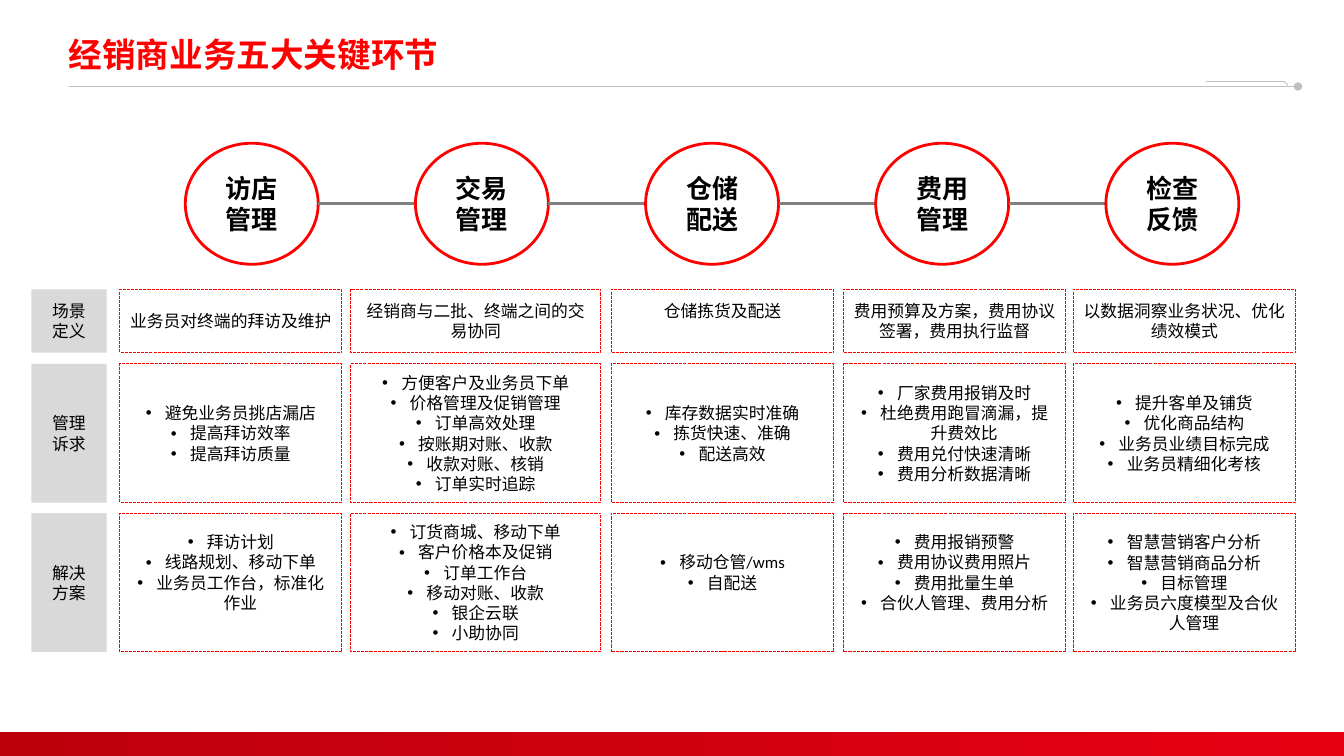
import lxml.etree
import pptx
import pptx.util
import pptx.dml.color
import pptx.enum.dml
import pptx.enum.shapes
import pptx.enum.text
import pptx.oxml.ns

Cm = pptx.util.Cm
Pt = pptx.util.Pt
Kind = pptx.enum.shapes.MSO_SHAPE
Align = pptx.enum.text.PP_ALIGN

COLORS = {
    "red": "FF0000", "text": "000000", "label": "D9D9D9", "link": "808080",
    "rule": "BFBFBF", "dark": "BC000B", "bright": "E60012",
}
CJK = "Noto Sans CJK SC"
LINE = 0.51
STEPS = ["访店管理", "交易管理", "仓储配送", "费用管理", "检查反馈"]
COLS = [(3.02, 5.6), (8.84, 6.3), (15.41, 5.6), (21.26, 5.6), (27.05, 5.6)]
ROWS = [
    (7.29, 1.6, ["场景", "定义"], False, [
        ["业务员对终端的拜访及维护"],
        ["经销商与二批、终端之间的交易协同"],
        ["仓储拣货及配送"],
        ["费用预算及方案，费用协议签署，费用执行监督"],
        ["以数据洞察业务状况、优化绩效模式"],
    ], [2]),
    (9.17, 3.5, ["管理", "诉求"], True, [
        ["避免业务员挑店漏店", "提高拜访效率", "提高拜访质量"],
        ["方便客户及业务员下单", "价格管理及促销管理", "订单高效处理",
         "按账期对账、收款", "收款对账、核销", "订单实时追踪"],
        ["库存数据实时准确", "拣货快速、准确", "配送高效"],
        ["厂家费用报销及时", "杜绝费用跑冒滴漏，提升费效比",
         "费用兑付快速清晰", "费用分析数据清晰"],
        ["提升客单及铺货", "优化商品结构", "业务员业绩目标完成", "业务员精细化考核"],
    ], []),
    (12.93, 3.5, ["解决", "方案"], True, [
        ["拜访计划", "线路规划、移动下单", "业务员工作台，标准化作业"],
        ["订货商城、移动下单", "客户价格本及促销", "订单工作台",
         "移动对账、收款", "银企云联", "小助协同"],
        ["移动仓管/wms", "自配送"],
        ["费用报销预警", "费用协议费用照片", "费用批量生单", "合伙人管理、费用分析"],
        ["智慧营销客户分析", "智慧营销商品分析", "目标管理", "业务员六度模型及合伙人管理"],
    ], [0, 2, 3]),
]


def color(name):
    return pptx.dml.color.RGBColor.from_string(COLORS[name])


def add_tag(parent, tag, **attrs):
    return lxml.etree.SubElement(parent, pptx.oxml.ns.qn(tag), attrs)


def write(shape, lines, size=12, bold=False, tint="text", font="Calibri",
          align=Align.CENTER, bullet=False, space=None, lift=0):
    frame = shape.text_frame
    frame.word_wrap = True
    frame.vertical_anchor = pptx.enum.text.MSO_ANCHOR.MIDDLE
    frame.margin_bottom = Cm(0.13 + lift)
    for index, line in enumerate(lines):
        para = frame.add_paragraph() if index else frame.paragraphs[0]
        if bullet:
            props = para._p.get_or_add_pPr()
            props.set("marL", str(Cm(0.48)))
            props.set("indent", str(Cm(-0.48)))
            add_tag(props, "a:buFont", typeface="Arial")
            add_tag(props, "a:buChar", char="•")
        para.alignment = align
        if space:
            para.line_spacing = space
        run = para.add_run()
        run.text = line
        run.font.size = Pt(size)
        run.font.bold = bold
        run.font.color.rgb = color(tint)
        run.font.name = font
        add_tag(run._r.get_or_add_rPr(), "a:ea", typeface=CJK)


def add_box(slide, box, kind=Kind.RECTANGLE, fill=None, line=None, width=0.75, dash=False):
    shape = slide.shapes.add_shape(kind, *map(Cm, box))
    shape.shadow.inherit = False
    if fill:
        shape.fill.solid()
        shape.fill.fore_color.rgb = color(fill)
    else:
        shape.fill.background()
    if line:
        shape.line.color.rgb = color(line)
        shape.line.width = Pt(width)
    else:
        shape.line.fill.background()
    if dash:
        shape.line.dash_style = pptx.enum.dml.MSO_LINE.SQUARE_DOT
    return shape


def add_line(slide, ends, tint, width, dot=False):
    line = slide.shapes.add_connector(pptx.enum.shapes.MSO_CONNECTOR.STRAIGHT, *map(Cm, ends))
    line.line.color.rgb = color(tint)
    line.line.width = Pt(width)
    if dot:
        add_tag(line.line._get_or_add_ln(), "a:tailEnd", type="oval")
    add_tag(line._element.spPr, "a:effectLst")


def add_head(slide, left, top, width, height):
    right, base = left + width, top + height
    add_line(slide, (left, base, right, base), "rule", 0.75, dot=True)
    add_line(slide, (right - 2.33, base - 0.13, right - 0.35, base - 0.13), "rule", 0.75)
    add_line(slide, (right - 0.35, base - 0.13, right - 0.25, base - 0.03), "rule", 0.75)
    title = slide.shapes.title
    title.left, title.top = Cm(left), Cm(top)
    title.width, title.height = Cm(25.6), Cm(1.27)
    title.text_frame.margin_left = 0
    write(title, ["经销商业务五大关键环节"], size=24, bold=True, tint="red",
          font=CJK, align=Align.LEFT, space=0.9)


def add_foot(slide, left, top, width, height):
    bar = add_box(slide, (left, top, width, height), fill="dark")
    bar.fill.gradient()
    bar.fill.gradient_angle = 0
    for stop, name in zip(bar.fill.gradient_stops, ("dark", "bright")):
        stop.color.rgb = color(name)


def add_chain(slide, left, top, width, height):
    size = 3.35
    pitch = (width - size) / (len(STEPS) - 1)
    mid = top + height / 2
    for index, step in enumerate(STEPS):
        start = left + index * pitch
        if index:
            add_line(slide, (start - pitch + size, mid, start, mid), "link", 2)
        oval = add_box(slide, (start, top, size, height), kind=Kind.OVAL, line="red", width=2)
        write(oval, [step], size=18.6, bold=True)


def add_row(slide, left, top, width, height, label, bullet, cells, raised):
    tag = add_box(slide, (left, top, width, height), fill="label")
    write(tag, label)
    for index, ((start, span), lines) in enumerate(zip(COLS, cells)):
        cell = add_box(slide, (start, top, span, height), line="red", dash=True)
        write(cell, lines, bullet=bullet, lift=LINE if index in raised else 0)


def main():
    deck = pptx.Presentation()
    deck.slide_width, deck.slide_height = Cm(33.87), Cm(19.05)
    slide = deck.slides.add_slide(deck.slide_layouts[5])
    add_head(slide, 1.73, 0.79, 30.98, 1.39)
    add_foot(slide, 0, 18.44, 33.87, 0.61)
    add_chain(slide, 4.67, 3.61, 26.55, 3.05)
    for top, height, label, bullet, cells, raised in ROWS:
        add_row(slide, 0.79, top, 1.9, height, label, bullet, cells, raised)
    deck.save("out.pptx")


if __name__ == "__main__":
    main()
